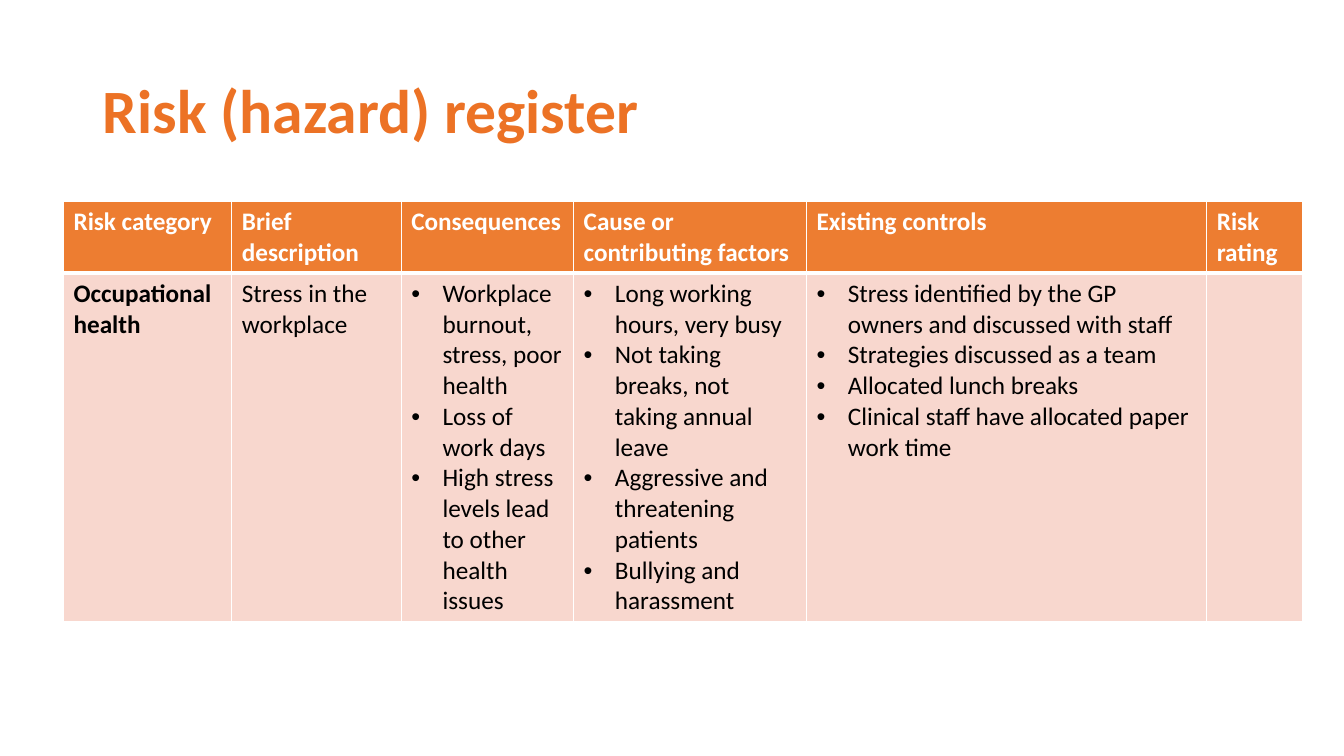
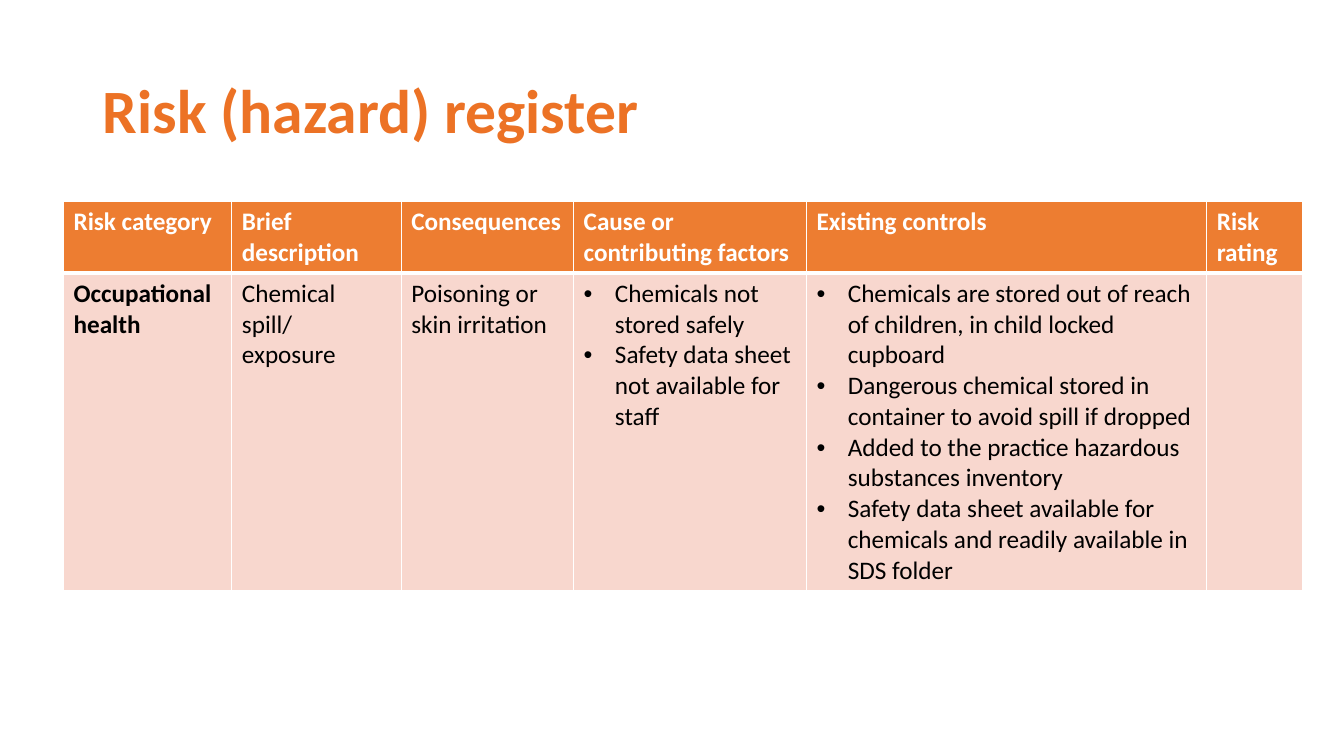
from dataclasses import dataclass

from lxml import etree
from pptx import Presentation
from pptx import util as u
from pptx.dml.color import RGBColor
from pptx.enum import text
from pptx.oxml import ns


@dataclass(frozen=True)
class Theme:
    font: str = "Calibri"
    title_size: int = 44
    table_size: int = 18
    title: str = "EC7225"
    header_fill: str = "ED7D31"
    body_fill: str = "F8D7CE"
    white: str = "FFFFFF"
    black: str = "000000"
    thin: float = 1
    thick: float = 3


THEME = Theme()
TITLE = "Risk (hazard) register"
TITLE_BOX = {"left": 0.92, "top": 0.4, "width": 11.5, "height": 1.45}
TABLE_LEFT, TABLE_TOP = 0.63, 2
HEADER_HEIGHT = 0.7
BULLET_INDENT = 0.31
COLUMNS = {
    "Risk category": 1.67,
    "Brief description": 1.68,
    "Consequences": 1.71,
    "Cause or contributing factors": 2.31,
    "Existing controls": 3.97,
    "Risk rating": 0.95,
}

# Each risk: height of its row, then one entry per column; a list is bulleted.
RISKS = [
    (3.45, [
        "Occupational health",
        "Stress in the workplace",
        ["Workplace burnout, stress, poor health",
         "Loss of work days",
         "High stress levels lead to other health issues"],
        ["Long working hours, very busy",
         "Not taking breaks, not taking annual leave",
         "Aggressive and threatening patients",
         "Bullying and harassment"],
        ["Stress identified by the GP owners and discussed with staff",
         "Strategies discussed as a team",
         "Allocated lunch breaks",
         "Clinical staff have allocated paper work time"],
        "",
    ]),
    (3.15, [
        "Occupational health",
        "Chemical spill/ exposure",
        "Poisoning or skin irritation",
        ["Chemicals not stored safely",
         "Safety data sheet not available for staff"],
        ["Chemicals are stored out of reach of children, in child locked cupboard",
         "Dangerous chemical stored in container to avoid spill if dropped",
         "Added to the practice hazardous substances inventory",
         "Safety data sheet available for chemicals and readily available in SDS folder"],
        "",
    ]),
]


def format_font(font, size, color, bold):
    formats = {"name": THEME.font, "size": u.Pt(size), "bold": bold}
    for name, value in formats.items():
        setattr(font, name, value)
    font.color.rgb = RGBColor.from_string(color)


def add_bullet(para):
    indent = u.Inches(BULLET_INDENT)
    properties = para._p.get_or_add_pPr()
    properties.set("marL", str(indent))
    properties.set("indent", str(-indent))
    etree.SubElement(properties, ns.qn("a:buFont"), typeface="Arial")
    etree.SubElement(properties, ns.qn("a:buChar"), char="•")


def add_borders(cell, **widths):
    """Draw white borders; widths in points are keyed L, R, T, B in that order."""
    properties = cell._tc.get_or_add_tcPr()
    for side, width in widths.items():
        line = etree.SubElement(properties, ns.qn(f"a:ln{side}"), w=str(u.Pt(width)))
        fill = etree.SubElement(line, ns.qn("a:solidFill"))
        etree.SubElement(fill, ns.qn("a:srgbClr"), val=THEME.white)


def fill_cell(cell, content, fill, color, bold, top, bottom):
    add_borders(cell, L=THEME.thin, R=THEME.thin, T=top, B=bottom)
    cell.fill.solid()
    cell.fill.fore_color.rgb = RGBColor.from_string(fill)
    bulleted = isinstance(content, list)
    frame = cell.text_frame
    frame.text = "\n".join(content) if bulleted else content
    for para in frame.paragraphs:
        if bulleted:
            add_bullet(para)
        for span in para.runs:
            format_font(span.font, THEME.table_size, color, bold)


def add_title(page):
    title = page.shapes.title
    for name, value in TITLE_BOX.items():
        setattr(title, name, u.Inches(value))
    frame = title.text_frame
    frame.text = TITLE
    frame.vertical_anchor = text.MSO_ANCHOR.MIDDLE
    para = frame.paragraphs[0]
    para.alignment = text.PP_ALIGN.LEFT
    para.line_spacing = 0.9
    format_font(para.runs[0].font, THEME.title_size, THEME.title, True)


def add_register(page, body_height, entries):
    heights = [HEADER_HEIGHT, body_height]
    table = page.shapes.add_table(
        len(heights), len(COLUMNS), u.Inches(TABLE_LEFT), u.Inches(TABLE_TOP),
        u.Inches(sum(COLUMNS.values())), u.Inches(sum(heights))).table
    table.first_row = table.horz_banding = False
    for row, height in zip(table.rows, heights):
        row.height = u.Inches(height)
    for index, ((heading, width), entry) in enumerate(zip(COLUMNS.items(), entries)):
        table.columns[index].width = u.Inches(width)
        fill_cell(table.cell(0, index), heading, THEME.header_fill, THEME.white,
                  True, THEME.thin, THEME.thick)
        fill_cell(table.cell(1, index), entry, THEME.body_fill, THEME.black,
                  index == 0, THEME.thick, THEME.thin)


def main():
    deck = Presentation()
    deck.slide_width, deck.slide_height = u.Inches(13.33), u.Inches(7.5)
    title_only = deck.slide_layouts.get_by_name("Title Only")
    for body_height, entries in RISKS:
        page = deck.slides.add_slide(title_only)
        add_title(page)
        add_register(page, body_height, entries)
    deck.save("out.pptx")


if __name__ == "__main__":
    main()
